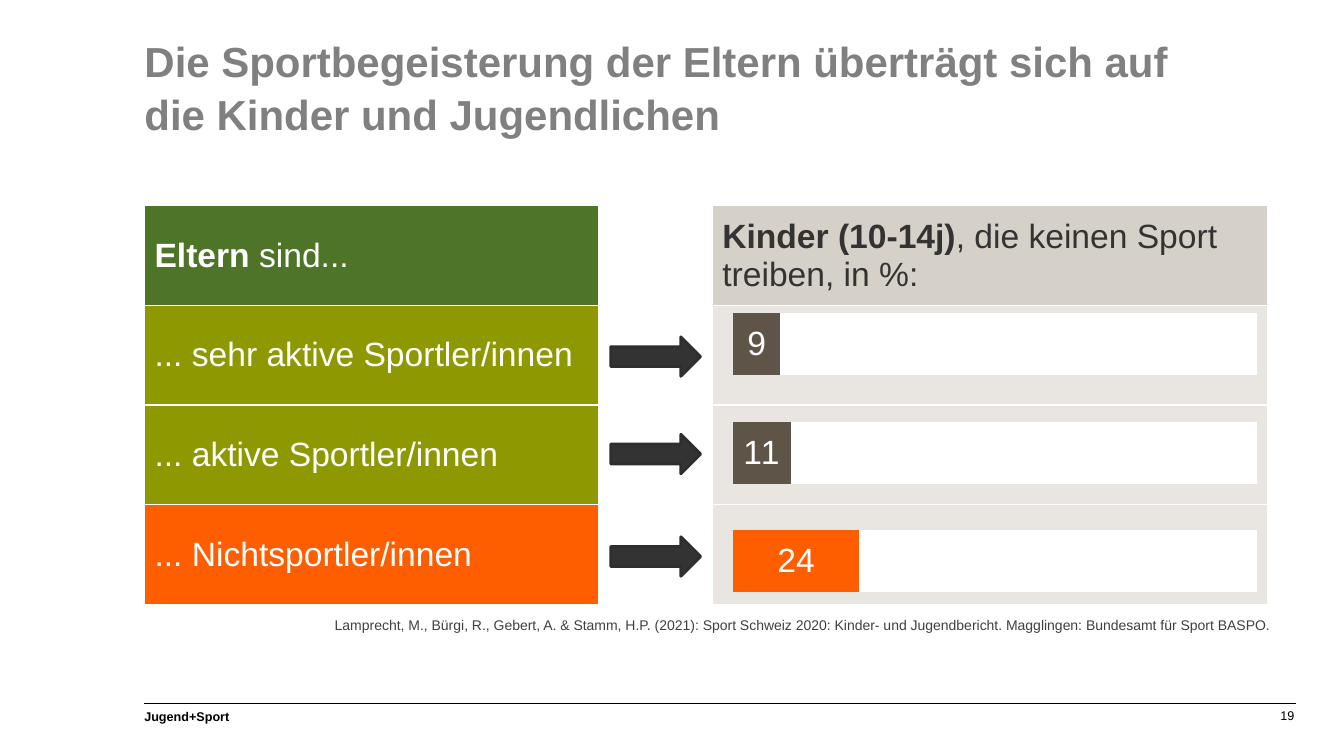
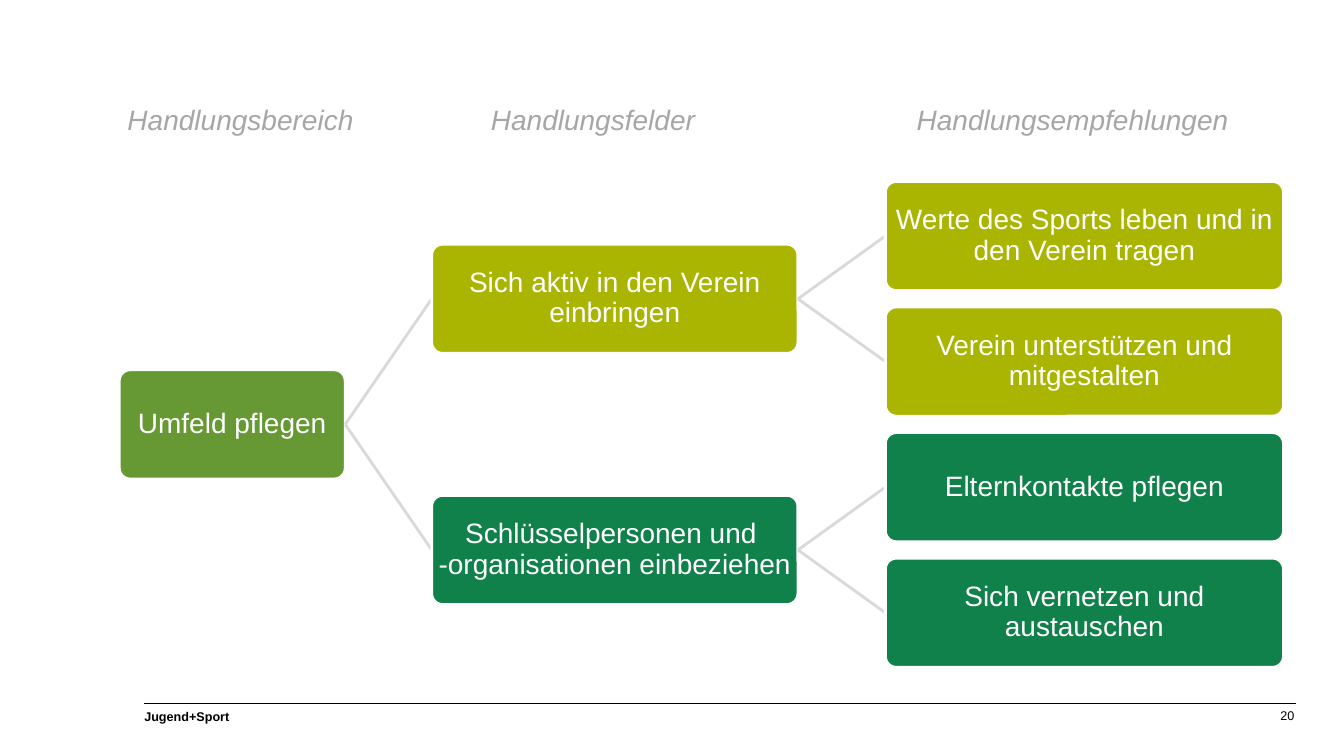
from lxml.etree import SubElement
from pptx import Presentation
from pptx.chart.data import CategoryChartData
from pptx.dml.color import RGBColor
from pptx.enum.chart import XL_CHART_TYPE as ChartType, XL_LABEL_POSITION as LabelPosition
from pptx.enum.shapes import MSO_CONNECTOR as Connector, MSO_SHAPE as Preset
from pptx.enum.text import MSO_ANCHOR as Anchor, PP_ALIGN as Align
from pptx.oxml.ns import qn
from pptx.util import Inches, Pt

COLORS = {
    "white": "FFFFFF", "black": "000000", "title": "808080", "source": "404040",
    "heading": "A6A6A6", "branch_line": "D9D9D9", "forest": "4E7428",
    "olive": "8E9901", "orange": "FF5E00", "stone": "D5D0C8", "sand": "E9E6E2",
    "charcoal": "333333", "arrow_edge": "2E2E2E", "brown": "5E5447",
    "leaf": "669933", "lime": "A9B501", "emerald": "10814A",
}
FONT = "Arial"
COLUMNS, ROWS = 160, 90
WIDTH, HEIGHT = Inches(13.333), Inches(7.5)
LEFT = 17.2
RIGHT = 154.3
NODE_HEIGHT = 13
LEAF_PITCH = 14.95
FIRST_LEAF_CENTER = 28.1
LEVELS = [(14.2, 26.9), (51.4, 43.6), (105.4, 47.4)]


def rgb(name):
    return RGBColor.from_string(COLORS[name])


def across(columns):
    return round(WIDTH * columns / COLUMNS)


def down(rows):
    return round(HEIGHT * rows / ROWS)


def area(left, top, width, height):
    return across(left), down(top), across(width), down(height)


def write_text(frame, text, *, size, color, lead="", bold=False, italic=False,
               align=Align.LEFT, anchor=Anchor.TOP, spacing=None, margins=None, wrap=True):
    frame.word_wrap = wrap
    frame.vertical_anchor = anchor
    if margins is not None:
        frame.margin_left, frame.margin_top, frame.margin_right, frame.margin_bottom = map(Inches, margins)
    paragraph = frame.paragraphs[0]
    paragraph.alignment = align
    if spacing:
        paragraph.line_spacing = spacing

    def add_part(words, weight):
        run = paragraph.add_run()
        run.text = words
        run.font.name, run.font.size = FONT, Pt(size)
        run.font.bold, run.font.italic = weight, italic
        run.font.color.rgb = rgb(color)

    if lead:
        add_part(lead, True)
    for number, line in enumerate(text.split("\n")):
        if number:
            paragraph.add_line_break()
        add_part(line, bold)


class Deck:
    def __init__(self, first_page):
        self.presentation = Presentation()
        self.presentation.slide_width, self.presentation.slide_height = WIDTH, HEIGHT
        self.page = first_page - 1
        self.shapes = None

    def new_slide(self):
        self.page += 1
        self.shapes = self.presentation.slides.add_slide(self.presentation.slide_layouts[6]).shapes
        self.line((LEFT, 83.8), (RIGHT, 83.8), "black", 0.75)
        self.text((16, 83.8, 68.4, 3), "Jugend+Sport", size=9, color="black", bold=True)
        self.text((115, 84.3, 39.1, 2), str(self.page), size=9, color="black",
                  align=Align.RIGHT, margins=(0, 0, 0, 0))

    def text(self, place, words, **style):
        write_text(self.shapes.add_textbox(*area(*place)).text_frame, words, **style)

    def title(self, words):
        self.text((LEFT, 3.4, 137, 13.7), words, size=30, color="title", bold=True,
                  anchor=Anchor.MIDDLE, spacing=1.05, margins=(0, 0.05, 0, 0.05), wrap=False)

    def line(self, start, end, color, weight):
        rule = self.shapes.add_connector(Connector.STRAIGHT, across(start[0]), down(start[1]),
                                         across(end[0]), down(end[1]))
        rule.line.color.rgb, rule.line.width = rgb(color), Pt(weight)
        SubElement(rule.element.spPr, qn("a:effectLst"))
        return rule

    def shape(self, preset, place, fill, edge, weight=2):
        outline = self.shapes.add_shape(preset, *area(*place))
        outline.shadow.inherit = False
        outline.fill.solid()
        outline.fill.fore_color.rgb = rgb(fill)
        outline.line.color.rgb, outline.line.width = rgb(edge), Pt(weight)
        return outline

    def node(self, level, center, words, fill):
        left, width = LEVELS[level]
        box = self.shape(Preset.ROUNDED_RECTANGLE,
                         (left, center - NODE_HEIGHT / 2, width, NODE_HEIGHT), fill, "white")
        box.adjustments[0] = 0.1
        write_text(box.text_frame, words, size=20, color="white", align=Align.CENTER,
                   anchor=Anchor.MIDDLE, spacing=0.9, margins=[0.01] * 4)
        return box

    def tree(self, topic, level=0):
        words, fill, center, children = topic
        parent = self.node(level, center, words, fill)
        left, width = LEVELS[level]
        for child in children:
            branch = self.line((left + width, center), (LEVELS[level + 1][0], child[2]), "branch_line", 2)
            branch.begin_connect(parent, 3)
            branch.end_connect(self.tree(child, level + 1), 1)
        return parent

    def table(self, left, top, widths, row_height, rows):
        grid = self.shapes.add_table(len(rows), len(widths), *area(
            left, top, sum(widths), row_height * len(rows))).table
        grid.first_row = grid.horz_banding = False
        for column, width in zip(grid.columns, widths):
            column.width = across(width)
        for row, contents in zip(grid.rows, rows):
            row.height = down(row_height)
            for cell, (fill, color, lead, words) in zip(row.cells, contents):
                if words:
                    write_text(cell.text_frame, words, size=24, color=color, lead=lead)
                cell.vertical_anchor = Anchor.MIDDLE
                self.borders(cell)
                cell.fill.solid()
                cell.fill.fore_color.rgb = rgb(fill)

    def borders(self, cell):
        properties = cell._tc.get_or_add_tcPr()
        for side in ("lnL", "lnR", "lnT", "lnB"):
            border = SubElement(properties, qn(f"a:{side}"), w=str(Pt(1)))
            paint = SubElement(border, qn("a:solidFill"))
            SubElement(paint, qn("a:srgbClr"), val=COLORS["white"])

    def share_bars(self, place, shares, colors):
        data = CategoryChartData()
        data.categories = [str(number + 1) for number in range(len(shares))]
        data.add_series("Series 1", shares)
        data.add_series("Series 2", [100 - share for share in shares])
        chart = self.shapes.add_chart(ChartType.BAR_STACKED_100, *area(*place), data).chart
        chart.has_legend = chart.has_title = False
        chart.font.name, chart.font.size = FONT, Pt(10)
        chart.font.color.rgb = rgb("black")
        background = SubElement(chart.element, qn("c:spPr"))
        SubElement(background, qn("a:noFill"))
        SubElement(SubElement(background, qn("a:ln")), qn("a:noFill"))
        chart.element.find(qn("c:txPr")).addprevious(background)
        chart.category_axis.reverse_order = True
        chart.value_axis.has_major_gridlines = False
        chart.category_axis.visible = chart.value_axis.visible = False
        plot = chart.plots[0]
        plot.gap_width, plot.overlap, plot.vary_by_categories = 75, 100, False
        inactive, rest = plot.series
        for series, color in ((inactive, "orange"), (rest, "white")):
            series.format.fill.solid()
            series.format.fill.fore_color.rgb = rgb(color)
        for number, color in enumerate(colors):
            fill = inactive.points[number].format.fill
            fill.solid()
            fill.fore_color.rgb = rgb(color)
        labels = inactive.data_labels
        labels.show_value, labels.position = True, LabelPosition.CENTER
        labels.font.name, labels.font.size = FONT, Pt(24)
        labels.font.color.rgb = rgb("white")


def add_parents_slide(deck):
    deck.new_slide()
    deck.title("Die Sportbegeisterung der Eltern überträgt sich auf\ndie Kinder und Jugendlichen")
    deck.text((37.4, 72.8, 113.7, 3.2),
              "Lamprecht, M., Bürgi, R., Gebert, A. & Stamm, H.P. (2021): Sport Schweiz 2020: "
              "Kinder- und Jugendbericht. Magglingen: Bundesamt für Sport BASPO.",
              size=10, color="source", align=Align.RIGHT, margins=(0.1, 0.05, 0, 0.05))
    gap = ("white", "white", "", "")
    header = [("forest", "white", "Eltern", " sind..."), gap,
              ("stone", "charcoal", "Kinder (10-14j)", ", die keinen Sport treiben, in %:")]
    groups = [("olive", "... sehr aktive Sportler/innen"), ("olive", "... aktive Sportler/innen"),
              ("orange", "... Nichtsportler/innen")]
    rows = [[(fill, "white", "", words), gap, ("sand", "white", "", "")] for fill, words in groups]
    deck.table(LEFT, 24.5, (54.1, 13.5, 66.1), 11.86, [header] + rows)
    deck.share_bars((86, 33.7, 64.9, 40.4), (9, 11, 24), ("brown", "brown", "orange"))
    for top in (40.1, 51.7, 63.9):
        deck.shape(Preset.RIGHT_ARROW, (72.7, top, 10.7, 4.7), "charcoal", "arrow_edge")


def place_topics(topic, leaf_centers):
    words, fill, children = topic
    placed = [place_topics(child, leaf_centers) for child in children]
    center = sum(child[2] for child in placed) / len(placed) if placed else next(leaf_centers)
    return words, fill, center, placed


def add_fields_slide(deck):
    deck.new_slide()
    topics = ("Umfeld pflegen", "leaf", [
        ("Sich aktiv in den Verein einbringen", "lime", [
            ("Werte des Sports leben und in den Verein tragen", "lime", []),
            ("Verein unterstützen und mitgestalten", "lime", [])]),
        ("Schlüsselpersonen und \n-organisationen einbeziehen", "emerald", [
            ("Elternkontakte pflegen", "emerald", []),
            ("Sich vernetzen und austauschen", "emerald", [])])])
    leaf_centers = iter([FIRST_LEAF_CENTER + LEAF_PITCH * number for number in range(4)])
    deck.tree(place_topics(topics, leaf_centers))
    for left, width, align, heading in (
            (14, 31, Align.LEFT, "Handlungsbereich"),
            (55.1, 31, Align.CENTER, "Handlungsfelder"),
            (104.9, 45.6, Align.CENTER, "Handlungsempfehlungen")):
        deck.text((left, 11.6, width, 5.3), heading, size=20, color="heading", italic=True, align=align)


def main():
    deck = Deck(first_page=19)
    add_parents_slide(deck)
    add_fields_slide(deck)
    deck.presentation.save("out.pptx")


if __name__ == "__main__":
    main()
